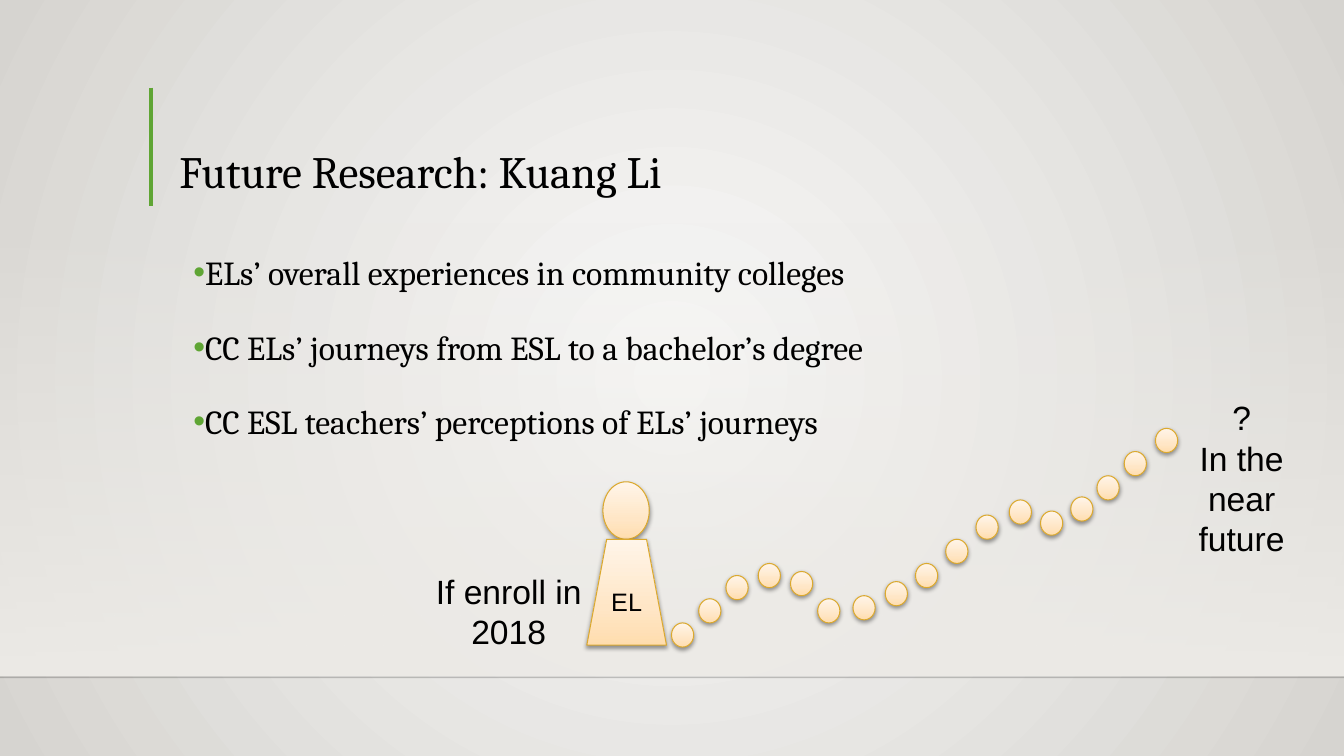
from pptx import Presentation
from pptx.dml.color import RGBColor
from pptx.enum.shapes import MSO_CONNECTOR, MSO_SHAPE
from pptx.enum.text import MSO_ANCHOR, PP_ALIGN
from pptx.oxml import parse_xml
from pptx.oxml.ns import nsdecls, qn
from pptx.util import Pt

SCALE = 9144
WIDE, HIGH = 1333, 750

BLACK = RGBColor(0, 0, 0)
GREEN = RGBColor(0x5F, 0xA5, 0x34)
GOLD = RGBColor(0xDB, 0xA9, 0x2F)
MIST = RGBColor(0xED, 0xEB, 0xE7)
PALE = RGBColor(0xF9, 0xF9, 0xF8)
STONE = RGBColor(0xD6, 0xD4, 0xD0)
PEACH = RGBColor(0xFF, 0xDD, 0xAE)
CREAM = RGBColor(0xFF, 0xE6, 0xC6)
IVORY = RGBColor(0xFF, 0xF5, 0xE9)

SKIN = [(0, PEACH, 100), (35, CREAM, 100), (100, IVORY, 100)]
RADIAL = '<a:path path="circle"><a:fillToRect l="50000" t="50000" r="50000" b="50000"/></a:path>'
POINTS = ["ELs’ overall experiences in community colleges",
          "CC ELs’ journeys from ESL to a bachelor’s degree",
          "CC ESL teachers’ perceptions of ELs’ journeys"]
STEPS = [(84, 140), (111, 116), (138, 93), (170, 81), (202, 89), (229, 116),
         (264, 113), (296, 99), (326, 81), (356, 57), (386, 33), (419, 18),
         (450, 29), (480, 15), (506, -6), (533, -30), (564, -53)]


def px(*sizes):
    return [int(size * SCALE) for size in sizes]


def linear(angle):
    return f'<a:lin ang="{angle * 60000}" scaled="0"/>'


def shade(owner, fill, stops, course):
    fill.solid()
    plain = next(owner.iter(qn("a:solidFill")))
    marks = "".join(
        f'<a:gs pos="{pos * 1000}"><a:srgbClr val="{color}">'
        f'<a:alpha val="{alpha * 1000}"/></a:srgbClr></a:gs>'
        for pos, color, alpha in stops)
    grad = parse_xml(f'<a:gradFill {nsdecls("a")} rotWithShape="1">'
                     f'<a:gsLst>{marks}</a:gsLst>{course}</a:gradFill>')
    plain.getparent().replace(plain, grad)


def rule(slide, start, end, color, width, alpha=100):
    line = slide.shapes.add_connector(MSO_CONNECTOR.STRAIGHT, *px(*start, *end))
    line.line.color.rgb = color
    line.line.width = Pt(width)
    props = line._element.spPr
    tint = next(props.iter(qn("a:srgbClr")))
    tint.append(parse_xml(f'<a:alpha {nsdecls("a")} val="{alpha * 1000}"/>'))
    props.append(parse_xml(f'<a:effectLst {nsdecls("a")}/>'))


def write(para, text, face, size):
    run = para.add_run()
    run.text = text
    run.font.name = face
    run.font.size = Pt(size)
    run.font.color.rgb = BLACK


def inset(frame):
    frame.word_wrap = True
    (frame.margin_left, frame.margin_top,
     frame.margin_right, frame.margin_bottom) = px(10, 10, 10, 10)


def backdrop(slide):
    shade(slide._element, slide.background.fill,
          [(0, PALE, 100), (100, STONE, 100)], RADIAL)
    band = slide.shapes.add_shape(MSO_SHAPE.RECTANGLE, *px(0, 220, WIDE, 450))
    band.shadow.inherit = False
    shade(band._element, band.fill, [(0, MIST, 0), (100, MIST, 100)], linear(90))
    band.line.fill.background()
    rule(slide, (0, 672), (WIDE, 672), BLACK, 1, 20)


def heading(slide, left, top, width, height):
    rule(slide, (left - 18, top - 4), (left - 18, top + 113), GREEN, 3)
    title = slide.shapes.title
    title.left, title.top, title.width, title.height = px(left, top, width, height)
    frame = title.text_frame
    inset(frame)
    frame.vertical_anchor = MSO_ANCHOR.BOTTOM
    para = frame.paragraphs[0]
    para.alignment = PP_ALIGN.LEFT
    para.line_spacing = 0.9
    write(para, "Future Research: Kuang Li", "Cambria", 32)


def bullets(slide, *box):
    frame = slide.shapes.add_textbox(*px(*box)).text_frame
    inset(frame)
    for index, text in enumerate(POINTS):
        para = frame.add_paragraph() if index else frame.paragraphs[0]
        para.line_spacing = 1.5
        para.space_before = Pt(10 if index else 0)
        props = para._p.get_or_add_pPr()
        indent, hang = px(25, -11)
        props.set("marL", str(indent))
        props.set("indent", str(hang))
        props.append(parse_xml(f'<a:buClr {nsdecls("a")}><a:srgbClr val="{GREEN}"/></a:buClr>'))
        props.append(parse_xml(f'<a:buFont {nsdecls("a")} typeface="Arial"/>'))
        props.append(parse_xml(f'<a:buChar {nsdecls("a")} char="•"/>'))
        write(para, text, "Cambria", 24)


def token(group, kind, *box):
    shape = group.shapes.add_shape(kind, *px(*box))
    shade(shape._element, shape.fill, SKIN, linear(270))
    shape.line.color.rgb = GOLD
    shape.line.width = Pt(0.75)
    shape.shadow.inherit = False
    glow = next(shape._element.iter(qn("a:effectLst")))
    glow.append(parse_xml(
        f'<a:outerShdw {nsdecls("a")} blurRad="{Pt(3.1)}" dist="{Pt(1.6)}" '
        'dir="5400000" rotWithShape="0"><a:srgbClr val="000000">'
        '<a:alpha val="38000"/></a:srgbClr></a:outerShdw>'))
    return shape


def label(group, lines, *box):
    frame = group.shapes.add_textbox(*px(*box)).text_frame
    frame.word_wrap = True
    for index, text in enumerate(lines):
        para = frame.add_paragraph() if index else frame.paragraphs[0]
        para.alignment = PP_ALIGN.CENTER
        write(para, text, "Arial", 24)


def journey(slide, left, top):
    group = slide.shapes.add_group_shape()
    token(group, MSO_SHAPE.OVAL, left + 16, top, 46, 57)
    body = token(group, MSO_SHAPE.TRAPEZOID, left, top + 57, 79, 105)
    frame = body.text_frame
    frame.vertical_anchor = MSO_ANCHOR.MIDDLE
    para = frame.paragraphs[0]
    para.alignment = PP_ALIGN.CENTER
    write(para, "EL", "Arial", 18)
    label(group, ["If enroll in 2018"], left - 162, top + 83, 169, 91)
    for across, down in STEPS:
        token(group, MSO_SHAPE.OVAL, left + across, top + down, 22, 24)
    label(group, ["?", "In the near future"], left + 586, top - 89, 127, 172)


def main():
    deck = Presentation()
    deck.slide_width, deck.slide_height = px(WIDE, HIGH)
    slide = deck.slides.add_slide(deck.slide_layouts[5])
    backdrop(slide)
    heading(slide, 168, 91, 1041, 116)
    bullets(slide, 168, 220, 911, 376)
    journey(slide, 582, 478)
    deck.save("out.pptx")


if __name__ == "__main__":
    main()
